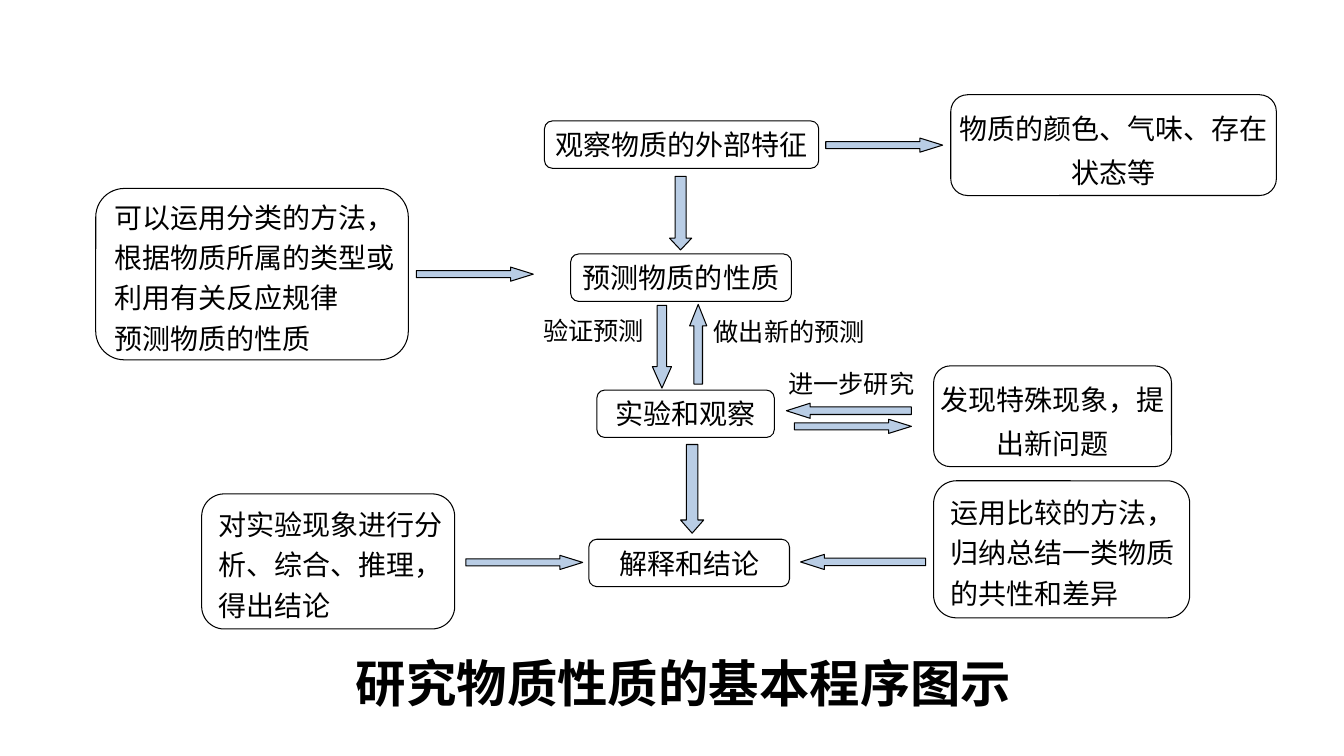
import pptx
import pptx.dml.color
import pptx.enum.shapes
import pptx.enum.text
import pptx.oxml.ns
import pptx.util

Inches = pptx.util.Inches
Shape = pptx.enum.shapes.MSO_SHAPE
Align = pptx.enum.text.PP_ALIGN
Anchor = pptx.enum.text.MSO_ANCHOR

INK = "000000"
ARROW_FILL = "B9CDE5"
CJK_FONT = "Noto Sans CJK SC"


def paint(target, value):
    target.rgb = pptx.dml.color.RGBColor.from_string(value)


def place(box, left, top, width, height):
    return [Inches(v) for v in (box[0] + left, box[1] + top, width, height)]


def write(frame, lines, size, font, align, spacing=None, bold=None):
    frame.text = "\n".join(lines)
    for para in frame.paragraphs:
        para.alignment = align
        para.line_spacing = spacing
        para.font.size = pptx.util.Pt(size)
        para.font.name = font
        para.font.bold = bold
        paint(para.font.fill_color if hasattr(para.font, "fill_color") else para.font.color, INK)


def add_outlined(page, kind, area):
    shape = page.shapes.add_shape(kind, *area)
    shape.shadow.inherit = False
    shape.line.width = pptx.util.Pt(0.75)
    paint(shape.line.color, INK)
    return shape


def add_card(page, area, lines, align=Align.CENTER, spacing=None, font="Cabin"):
    card = add_outlined(page, Shape.FLOWCHART_ALTERNATE_PROCESS, area)
    card.fill.background()
    frame = card.text_frame
    frame.word_wrap = False
    frame.vertical_anchor = Anchor.MIDDLE
    write(frame, lines, 20, font, align, spacing)


def add_arrow(page, kind, area, head):
    arrow = add_outlined(page, kind, area)
    arrow.adjustments[0] = 0.5
    arrow.adjustments[1] = head
    arrow.fill.solid()
    paint(arrow.fill.fore_color, ARROW_FILL)


def add_right_arrow(page, box, left, top):
    add_arrow(page, Shape.RIGHT_ARROW, place(box, left, top, 1.16, 0.14), 1.61)


def add_left_arrow(page, box, left, top):
    add_arrow(page, Shape.LEFT_ARROW, place(box, left, top, 1.24, 0.15), 1.57)


def add_label(page, area, text):
    label = page.shapes.add_textbox(*area)
    label.text_frame.word_wrap = True
    write(label.text_frame, [text], 18, "Calibri", Align.LEFT)


def add_title(page, box):
    title = page.shapes.title
    title.left, title.top, title.width, title.height = place(box, 0, 0, 6.81, 0.69)
    frame = title.text_frame
    frame.auto_size = pptx.enum.text.MSO_AUTO_SIZE.NONE
    frame.vertical_anchor = Anchor.MIDDLE
    write(frame, ["研究物质性质的基本程序图示"], 36, CJK_FONT, Align.LEFT, bold=True)


def add_procedure(page, box):
    steps = [
        (0.11, 0, 2.72, "观察物质的外部特征"),
        (0.37, 1.32, 2.19, "预测物质的性质"),
        (0.63, 2.67, 1.76, "实验和观察"),
        (0.55, 4.15, 1.99, "解释和结论"),
    ]
    for left, top, width, text in steps:
        add_card(page, place(box, left, top, width, 0.47), [text])
    arrows = [
        (Shape.DOWN_ARROW, 1.35, 0.55, 0.22, 0.73, 0.53),
        (Shape.DOWN_ARROW, 1.18, 1.83, 0.19, 0.82, 1.12),
        (Shape.UP_ARROW, 1.55, 1.82, 0.17, 0.79, 1.25),
        (Shape.DOWN_ARROW, 1.46, 3.21, 0.23, 0.88, 0.57),
    ]
    for kind, left, top, width, height, head in arrows:
        add_arrow(page, kind, place(box, left, top, width, height), head)
    add_label(page, place(box, 0, 1.88, 1.24, 0.4), "验证预测")
    add_label(page, place(box, 1.69, 1.89, 1.7, 0.4), "做出新的预测")


def add_left_notes(page, box):
    prediction = ["可以运用分类的方法，", "根据物质所属的类型或", "利用有关反应规律", "预测物质的性质"]
    analysis = ["对实验现象进行分", "析、综合、推理，", "得出结论"]
    add_card(page, place(box, 0, 0, 3.1, 1.7), prediction, Align.LEFT, 1.2)
    add_card(page, place(box, 1.05, 3.03, 2.51, 1.34), analysis, Align.LEFT, 1.2)
    add_right_arrow(page, box, 3.18, 0.78)
    add_right_arrow(page, box, 3.67, 3.64)


def add_right_notes(page, box):
    features = ["物质的颜色、气味、存在", "状态等"]
    questions = ["发现特殊现象，提", "出新问题"]
    comparison = ["运用比较的方法，", "归纳总结一类物质", "的共性和差异"]
    add_card(page, place(box, 1.71, 0, 3.23, 1), features, spacing=1.3, font="Calibri")
    add_card(page, place(box, 1.54, 2.69, 2.36, 1), questions, spacing=1.3)
    add_card(page, place(box, 1.54, 3.83, 2.54, 1.36), comparison, Align.LEFT, 1.2)
    add_right_arrow(page, box, 0.47, 0.43)
    add_left_arrow(page, box, 0.08, 3.06)
    add_right_arrow(page, box, 0.16, 3.22)
    add_left_arrow(page, box, 0.22, 4.56)
    add_label(page, place(box, 0, 2.66, 1.49, 0.4), "进一步研究")


def main():
    deck = pptx.Presentation()
    deck.slide_width = Inches(13.33)
    deck.slide_height = Inches(7.5)
    page = deck.slides.add_slide(deck.slide_layouts[5])
    add_title(page, (3.43, 6.42))
    add_procedure(page, (5.29, 1.2))
    add_left_notes(page, (0.95, 1.87))
    add_right_notes(page, (7.72, 0.94))
    deck.save("out.pptx")


if __name__ == "__main__":
    main()
